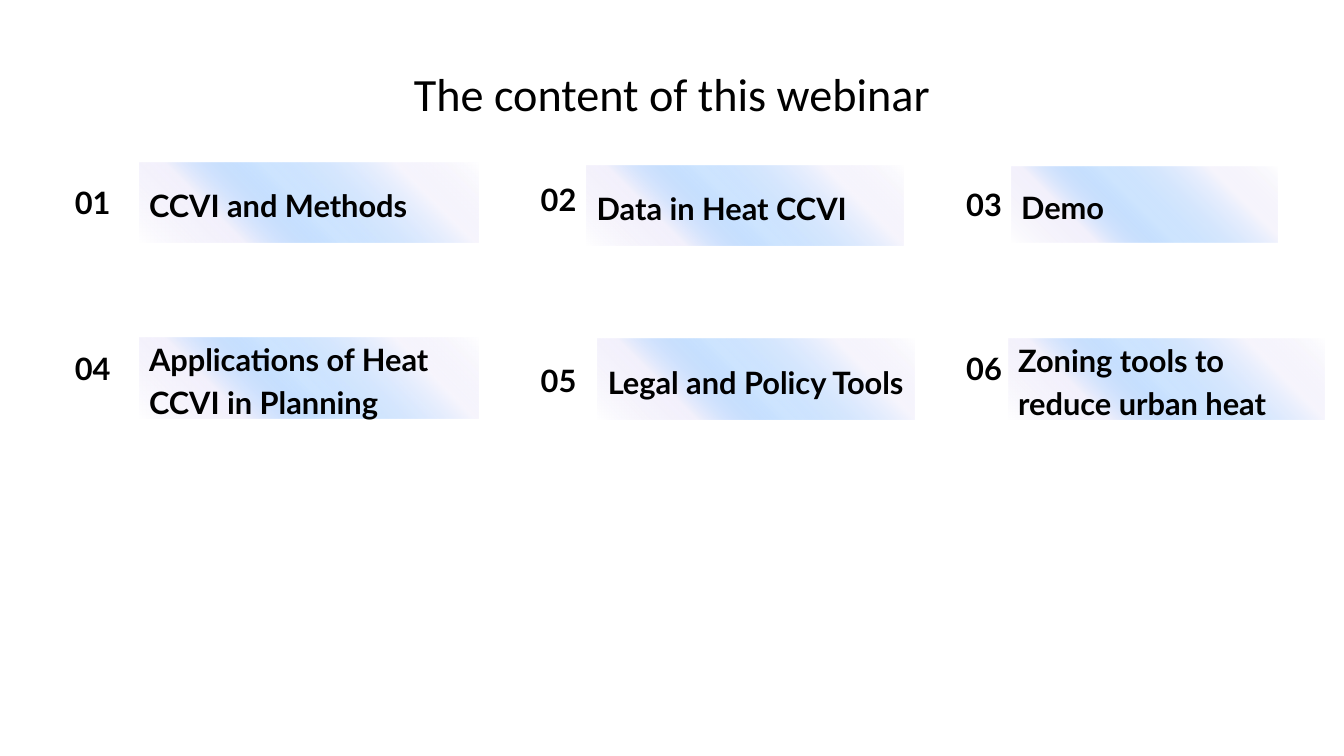
from lxml import etree
from pptx import Presentation
from pptx import util as u
from pptx.dml.color import RGBColor
from pptx.enum import shapes, text
from pptx.oxml import ns

WIDTH, HEIGHT = 13.33, 7.5
COLUMNS = (0.54, 5.16, 9.38)
ROWS = (1.63, 3.36)
NUMBER_SIDE = 0.76
STOPS = ((0, "FFFFFF", 100), (20, "EAE6FA", 39), (52, "0076FF", 19),
         (75, "EAE6FA", 55), (100, "FFFFFF", 100))
# Wording, then number drop, then card indent, drop, width and height
TOPICS = (
    ("CCVI and Methods", 0, (0.84, -0.02, 3.37, 0.8)),
    ("Data in Heat CCVI", -0.03, (0.66, 0.01, 3.14, 0.8)),
    ("Demo", 0.02, (0.65, 0.02, 2.64, 0.76)),
    ("Applications of Heat CCVI in Planning", -0.09, (0.84, -0.01, 3.37, 0.8)),
    ("Legal and Policy Tools", 0.03, (0.77, 0, 3.14, 0.8)),
    ("Zoning tools to reduce urban heat", -0.09, (0.62, 0, 3.14, 0.8)),
)


def color(value):
    return RGBColor.from_string(value)


def inches(*lengths):
    return [u.Inches(length) for length in lengths]


def write(shape, wording, size, face, bold, align):
    frame = shape.text_frame
    frame.word_wrap = True
    frame.vertical_anchor = text.MSO_ANCHOR.MIDDLE
    frame.text = wording
    para = frame.paragraphs[0]
    para.alignment = align
    font = para.font
    font.size, font.name, font.bold = u.Pt(size), face, bold
    font.color.rgb = color("000000")
    return para


def write_label(shape, wording, align):
    frame = shape.text_frame
    frame.margin_left = frame.margin_right = u.Inches(0.1)
    frame.margin_top = frame.margin_bottom = u.Inches(0.1)
    return write(shape, wording, 22, "Lato", True, align)


def fill_gradient(shape):
    shape.fill.background()
    gradient = etree.Element(ns.qn("a:gradFill"), rotWithShape="1")
    stops = etree.SubElement(gradient, ns.qn("a:gsLst"))
    for position, value, opacity in STOPS:
        stop = etree.SubElement(stops, ns.qn("a:gs"), pos=str(position * 1000))
        tint = etree.SubElement(stop, ns.qn("a:srgbClr"), val=value)
        if opacity < 100:
            etree.SubElement(tint, ns.qn("a:alpha"), val=str(opacity * 1000))
    etree.SubElement(gradient, ns.qn("a:lin"), ang=str(135 * 60000), scaled="0")
    properties = shape.element.spPr
    properties.replace(properties.find(ns.qn("a:noFill")), gradient)


def add_title(page, left, top, width, height):
    title = page.shapes.title
    title.left, title.top, title.width, title.height = inches(left, top, width, height)
    write(title, "The content of this webinar", 33, "Calibri", False, text.PP_ALIGN.CENTER)


def add_card(page, left, top, width, height, wording):
    card = page.shapes.add_shape(shapes.MSO_SHAPE.RECTANGLE, *inches(left, top, width, height))
    card.shadow.inherit = False
    card.line.fill.background()
    fill_gradient(card)
    para = write_label(card, wording, text.PP_ALIGN.LEFT)
    para.line_spacing = 1.15
    para.space_after = u.Pt(12)


def add_number(page, left, top, number):
    box = page.shapes.add_textbox(*inches(left, top, NUMBER_SIDE, NUMBER_SIDE))
    write_label(box, f"{number:02d}", text.PP_ALIGN.CENTER)


def add_topics(page):
    for index, (wording, number_drop, card) in enumerate(TOPICS):
        row, column = divmod(index, len(COLUMNS))
        left, top = COLUMNS[column], ROWS[row]
        indent, drop, width, height = card
        add_card(page, left + indent, top + drop, width, height, wording)
        add_number(page, left, top + number_drop, index + 1)


def main():
    deck = Presentation()
    deck.slide_width, deck.slide_height = inches(WIDTH, HEIGHT)
    page = deck.slides.add_slide(deck.slide_layouts[5])
    page.background.fill.solid()
    page.background.fill.fore_color.rgb = color("FFFFFF")
    add_title(page, WIDTH * 0.05, HEIGHT * 0.04, WIDTH * 0.9, HEIGHT / 6)
    add_topics(page)
    deck.save("out.pptx")


if __name__ == "__main__":
    main()
